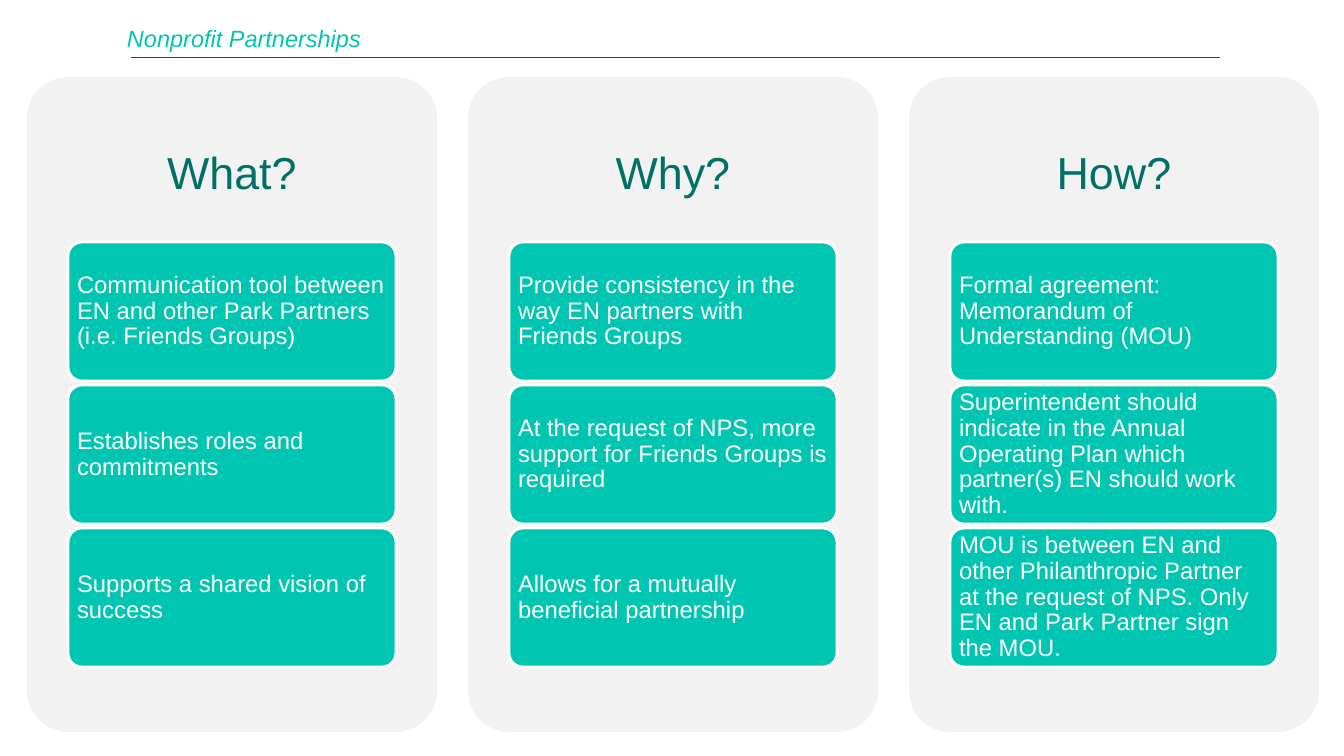
from lxml import etree
from pptx import Presentation
from pptx.dml.color import RGBColor
from pptx.enum.shapes import MSO_CONNECTOR, MSO_SHAPE
from pptx.enum.text import MSO_ANCHOR, MSO_AUTO_SIZE, PP_ALIGN
from pptx.oxml.ns import qn
from pptx.util import Pt

ROUND = MSO_SHAPE.ROUNDED_RECTANGLE
STRAIGHT = MSO_CONNECTOR.STRAIGHT
MIDDLE, TOP = MSO_ANCHOR.MIDDLE, MSO_ANCHOR.TOP
LEFT, CENTER = PP_ALIGN.LEFT, PP_ALIGN.CENTER

# Content
TITLE = "Nonprofit Partnerships"
COLUMNS = [
    ("What?", [
        "Communication tool between EN and other Park Partners (i.e. Friends Groups)",
        "Establishes roles and commitments",
        "Supports a shared vision of success",
    ]),
    ("Why?", [
        "Provide consistency in the way EN partners with Friends Groups",
        "At the request of NPS, more support for Friends Groups is required",
        "Allows for a mutually beneficial partnership",
    ]),
    ("How?", [
        "Formal agreement: Memorandum of Understanding (MOU)",
        "Superintendent should indicate in the Annual Operating Plan which "
        "partner(s) EN should work with.",
        "MOU is between EN and other Philanthropic Partner at the request of NPS. "
        "Only EN and Park Partner sign the MOU.",
    ]),
]

# Style and layout, lengths in px
FONT = "Arial"
TEAL, DARK_TEAL, NAVY, GREY, WHITE = "00C5B0", "007066", "0F4796", "F2F2F2", "FFFFFF"
SLIDE_W, SLIDE_H = 1344, 756
PANEL_X, PANEL_Y, PANEL_W, PANEL_H, PANEL_STEP = 27, 77, 410, 655, 441
HEADING_H = 197
CARD_Y, CARD_W, CARD_H, CARD_STEP = 242, 328, 139, 143


def px(n):
    return round(n * 914400 / 100.8)


def rgb(color):
    return RGBColor.from_string(color)


def write(shape, text, size, color, align=LEFT, anchor=MIDDLE, insets=(10, 5),
          spacing=0.9, italic=False):
    tf = shape.text_frame
    tf.word_wrap = True
    tf.auto_size = MSO_AUTO_SIZE.NONE
    tf.vertical_anchor = anchor
    tf.margin_left = tf.margin_right = px(insets[0])
    tf.margin_top = tf.margin_bottom = px(insets[1])
    p = tf.paragraphs[0]
    p.alignment = align
    p.line_spacing = spacing
    p.space_before = Pt(0)
    r = p.add_run()
    r.text = text
    r.font.name, r.font.size, r.font.italic = FONT, Pt(size), italic
    r.font.color.rgb = rgb(color)


def add_round_rect(s, x, y, w, h, fill, line=None):
    sp = s.shapes.add_shape(ROUND, px(x), px(y), px(w), px(h))
    sp.shadow.inherit = False
    sp.adjustments[0] = 0.1
    sp.fill.solid()
    sp.fill.fore_color.rgb = rgb(fill)
    if line:
        sp.line.color.rgb = rgb(line)
        sp.line.width = Pt(2)
    else:
        sp.line.fill.background()
    return sp


def main():
    prs = Presentation()
    prs.slide_width, prs.slide_height = px(SLIDE_W), px(SLIDE_H)
    s = prs.slides.add_slide(prs.slide_layouts[5])

    # Title and rule
    title = s.shapes.title
    title.left, title.top, title.width, title.height = px(117), px(19), px(1149), px(38)
    write(title, TITLE, 16.8, TEAL, anchor=TOP, spacing=1.0, italic=True)
    rule = s.shapes.add_connector(STRAIGHT, px(131), px(58), px(1220), px(58))
    rule.line.color.rgb = rgb(NAVY)
    rule.line.width = Pt(0.75)
    etree.SubElement(rule._element.spPr, qn("a:effectLst"))

    # Panels, each with a heading and its cards
    for col, (heading, cards) in enumerate(COLUMNS):
        x = PANEL_X + col * PANEL_STEP
        add_round_rect(s, x, PANEL_Y, PANEL_W, PANEL_H, GREY)
        box = s.shapes.add_textbox(px(x), px(PANEL_Y), px(PANEL_W), px(HEADING_H))
        write(box, heading, 32, DARK_TEAL, align=CENTER, insets=(13, 13))
        card_x = x + (PANEL_W - CARD_W) / 2
        for row, text in enumerate(cards):
            card = add_round_rect(s, card_x, CARD_Y + row * CARD_STEP,
                                  CARD_W, CARD_H, TEAL, WHITE)
            write(card, text, 17, WHITE, insets=(5, 4))

    prs.save("out.pptx")


if __name__ == "__main__":
    main()
